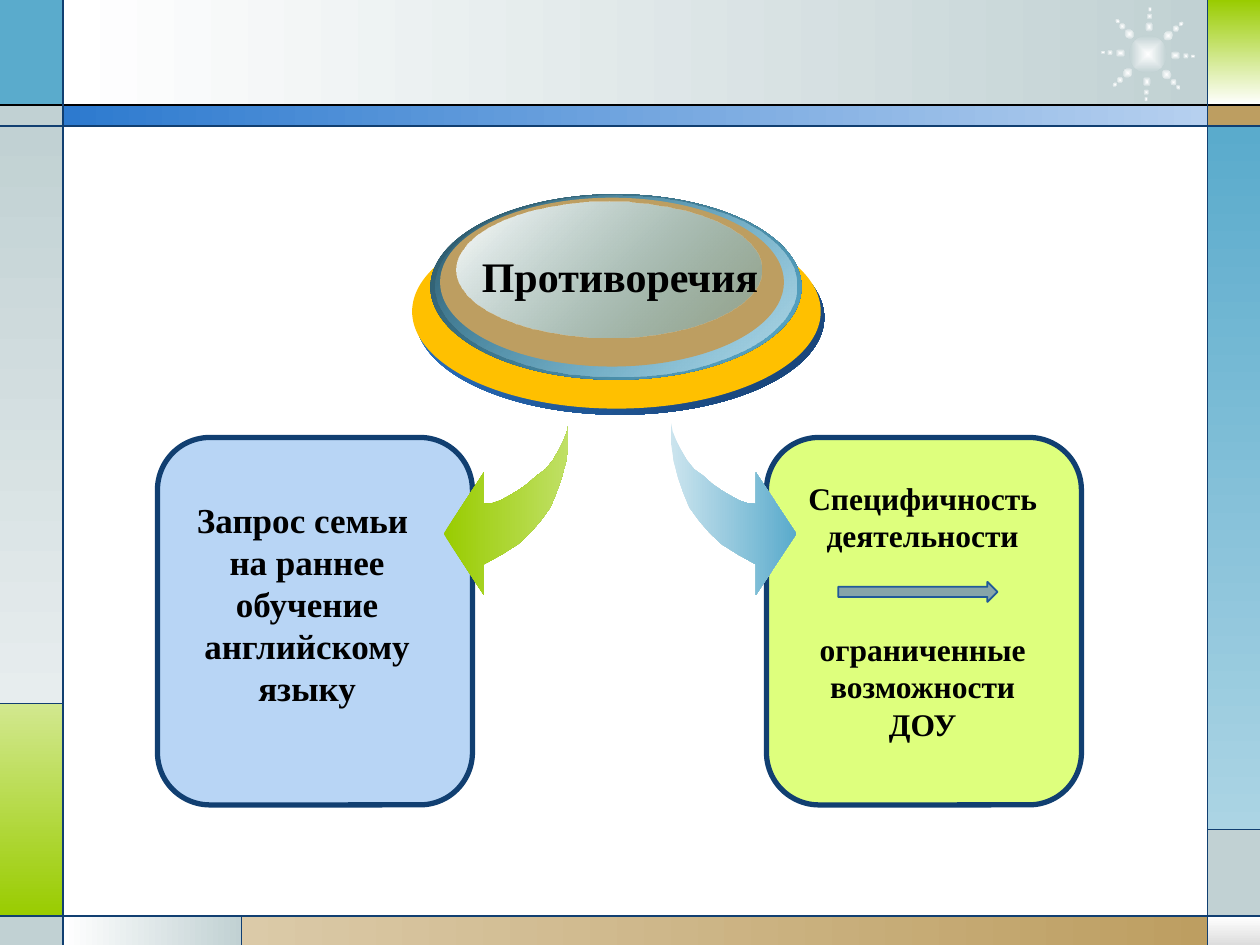
from math import cos, radians, sin

from lxml import etree
from pptx import Presentation
from pptx.dml.color import RGBColor
from pptx.enum.shapes import MSO_CONNECTOR as Connector, MSO_SHAPE as Shape
from pptx.enum.text import PP_ALIGN as Align
from pptx.oxml import parse_xml
from pptx.oxml.ns import qn
from pptx.util import Pt

WIDTH, HEIGHT = 720, 540
LEFT, RIGHT, TOP, BAND, BOTTOM = 36, 690, 60, 72, 523.5
GREEN_TOP, BLUE_END, FOOTER_SPLIT = 402, 474, 138
NAVY, BLUE, GREEN, GREY, GOLD = "113F71", "5AABCC", "99CC00", "C1D1D3", "BD9E61"
DRAWING = "http://schemas.openxmlformats.org/drawingml/2006/main"


def rgb(color):
    return RGBColor.from_string(color)


def gradient(start, end, angle=0, start_alpha=100, end_alpha=100, radial=False):
    """Return a two-stop gradient fill; the angle runs clockwise."""
    stops = "".join(
        f'<a:gs pos="{position}"><a:srgbClr val="{color}">'
        f'<a:alpha val="{alpha * 1000}"/></a:srgbClr></a:gs>'
        for position, color, alpha in ((0, start, start_alpha), (100000, end, end_alpha)))
    if radial:
        direction = ('<a:path path="shape"><a:fillToRect l="50000" t="50000" '
                     'r="50000" b="50000"/></a:path>')
    else:
        direction = f'<a:lin ang="{angle * 60000}" scaled="0"/>'
    return parse_xml(f'<a:gradFill xmlns:a="{DRAWING}" rotWithShape="1">'
                     f'<a:gsLst>{stops}</a:gsLst>{direction}</a:gradFill>')


class Painter:
    font = "Times New Roman"
    text_color = "000000"

    def __init__(self, slide):
        self.slide = slide

    def style(self, shape, fill, line=None, weight=1):
        """Fill with a hex colour or a gradient, and outline if asked."""
        shape.shadow.inherit = False
        if isinstance(fill, str):
            shape.fill.solid()
            shape.fill.fore_color.rgb = rgb(fill)
        else:
            properties = shape._element.spPr
            geometry = properties.find(qn("a:prstGeom"))
            if geometry is None:
                geometry = properties.find(qn("a:custGeom"))
            geometry.addnext(fill)
        if line:
            shape.line.color.rgb = rgb(line)
            shape.line.width = Pt(weight)
        else:
            shape.line.fill.background()
        return shape

    def shape(self, kind, left, top, width, height, fill, line=None, weight=1):
        shape = self.slide.shapes.add_shape(kind, Pt(left), Pt(top), Pt(width), Pt(height))
        return self.style(shape, fill, line, weight)

    def panel(self, left, top, right, bottom, fill):
        self.shape(Shape.RECTANGLE, left, top, right - left, bottom - top, fill)

    def line(self, x1, y1, x2, y2, color=NAVY):
        line = self.slide.shapes.add_connector(
            Connector.STRAIGHT, Pt(x1), Pt(y1), Pt(x2), Pt(y2))
        line.line.color.rgb = rgb(color)
        line.line.width = Pt(0.75)
        etree.SubElement(line._element.spPr, qn("a:effectLst"))

    def outline(self, points, fill):
        corners = [(Pt(x), Pt(y)) for x, y in points]
        builder = self.slide.shapes.build_freeform(*corners[0], scale=1.0)
        builder.add_line_segments(corners[1:], close=True)
        self.style(builder.convert_to_shape(), fill)

    def text(self, left, top, width, height, paragraphs, size, gap=0):
        """Add centred bold text with a gap between paragraphs."""
        box = self.slide.shapes.add_textbox(Pt(left), Pt(top), Pt(width), Pt(height))
        frame = box.text_frame
        frame.word_wrap = True
        frame.text = "\n".join(paragraphs)
        for index, para in enumerate(frame.paragraphs):
            para.alignment = Align.CENTER
            para.space_before = Pt(gap if index else 0)
            for span in para.runs:
                span.font.name = self.font
                span.font.size = Pt(size)
                span.font.bold = True
                span.font.color.rgb = rgb(self.text_color)


def draw_frame(painter):
    panels = [
        (LEFT, 0, RIGHT, TOP, gradient("FFFFFF", GREY)),
        (0, 0, LEFT, TOP, BLUE),
        (0, TOP, LEFT, BAND, GREY),
        (0, BAND, LEFT, GREEN_TOP, gradient(GREY, "E7EDEE", 90)),
        (0, GREEN_TOP, LEFT, BOTTOM, gradient("D2E88F", GREEN, 90)),
        (0, BOTTOM, LEFT, HEIGHT, GREY),
        (LEFT, BOTTOM, FOOTER_SPLIT, HEIGHT, gradient("FFFFFF", GREY)),
        (FOOTER_SPLIT, BOTTOM, RIGHT, HEIGHT, gradient("DBCAA8", GOLD)),
        (RIGHT, BOTTOM, WIDTH, HEIGHT, gradient("FFFFFF", "DDDDDD", 90)),
        (RIGHT, BLUE_END, WIDTH, BOTTOM, GREY),
        (RIGHT, BAND, WIDTH, BLUE_END, gradient(BLUE, "ABD4E4", 90)),
        (RIGHT, TOP, WIDTH, BAND, GOLD),
        (RIGHT, 0, WIDTH, TOP, gradient(GREEN, "FFFFFF", 90)),
        (LEFT, TOP, RIGHT, BAND, gradient("2D7ACF", "B6D0EF")),
    ]
    for panel in panels:
        painter.panel(*panel)


def draw_rules(painter):
    painter.line(0, TOP, WIDTH, TOP, "000000")
    for y in (BAND, BOTTOM):
        painter.line(0, y, WIDTH, y)
    for x in (LEFT, RIGHT):
        painter.line(x, 0, x, HEIGHT)
    painter.line(0, GREEN_TOP, LEFT, GREEN_TOP)
    painter.line(FOOTER_SPLIT, BOTTOM, FOOTER_SPLIT, HEIGHT)
    painter.line(RIGHT, BLUE_END, WIDTH, BLUE_END)


def draw_starburst(painter, x=656, y=31):
    dots = [(0, 0, 21.6, 21.6)]
    for ray in range(8):
        angle = 45 * ray + 2.5
        dots += [(angle, 15.7, 5.8, 5), (angle, 21.7, 3.6, 3.6), (angle, 25.7, 2.9, 2.2)]
    for angle, radius, width, height in dots:
        dot = painter.shape(
            Shape.OVAL,
            x + radius * cos(radians(angle)) - width / 2,
            y + radius * sin(radians(angle)) - height / 2,
            width, height, gradient("FFFFFF", GREY, radial=True))
        dot.rotation = angle


def draw_cards(painter):
    for left, fill in ((438, "DEFF7D"), (90, "B8D5F5")):
        painter.shape(Shape.ROUNDED_RECTANGLE, left, 250, 180, 210, fill, NAVY, 3)


def draw_curved_arrows(painter, mirror_sum=708.5):
    green_arrow = [
        (325, 242), (325, 253.5), (323.5, 263.5), (321, 273), (318, 281.5),
        (314.5, 290), (309, 297.5), (303, 304.5), (296, 311), (286.5, 317),
        (276.5, 322.5), (276.5, 340), (253.5, 305), (276.5, 270), (276.5, 288),
        (281.5, 287.5), (286, 286), (291.5, 283), (296.5, 280), (301.5, 276.5),
        (306.5, 272), (312, 268), (316, 263), (319.5, 257), (322, 252), (324, 247)]
    blue_arrow = [(mirror_sum - x, y) for x, y in green_arrow]
    painter.outline(green_arrow, gradient(GREEN, "C0E066"))
    painter.outline(blue_arrow, gradient("CBE4EE", BLUE))


def draw_medallion(painter):
    ovals = [
        (237.5, 126, 233.5, 111, gradient("2D7ACF", "173F70", 45)),
        (235.5, 122.5, 233.5, 111, "FFC000"),
        (246, 111, 212, 106, gradient("2A5566", BLUE, 45)),
        (249, 112, 206, 103, gradient(BLUE, "B5D9E7", 45, start_alpha=0)),
        (251.5, 113, 196.5, 96.5, GOLD),
        (261, 115, 174, 78, gradient("FFFFFF", BLUE, 45, end_alpha=38)),
    ]
    for oval in ovals:
        painter.shape(Shape.OVAL, *oval)


def main():
    deck = Presentation()
    deck.slide_width, deck.slide_height = Pt(WIDTH), Pt(HEIGHT)
    painter = Painter(deck.slides.add_slide(deck.slide_layouts[6]))
    draw_frame(painter)
    draw_starburst(painter)
    draw_rules(painter)
    draw_cards(painter)
    draw_curved_arrows(painter)
    draw_medallion(painter)
    painter.text(263.5, 139.5, 181.5, 36, ["Противоречия"], 24)
    painter.text(93.5, 281.5, 164, 128,
                 ["Запрос семьи ", "на раннее обучение английскому языку"], 20)
    painter.text(450.5, 270, 153.5, 160,
                 ["Специфичность деятельности", "ограниченные возможности ДОУ"], 18, gap=43)
    painter.shape(Shape.RIGHT_ARROW, 479, 332.5, 91, 11.5, "86A5A9", "215A99")
    deck.save("out.pptx")


if __name__ == "__main__":
    main()
